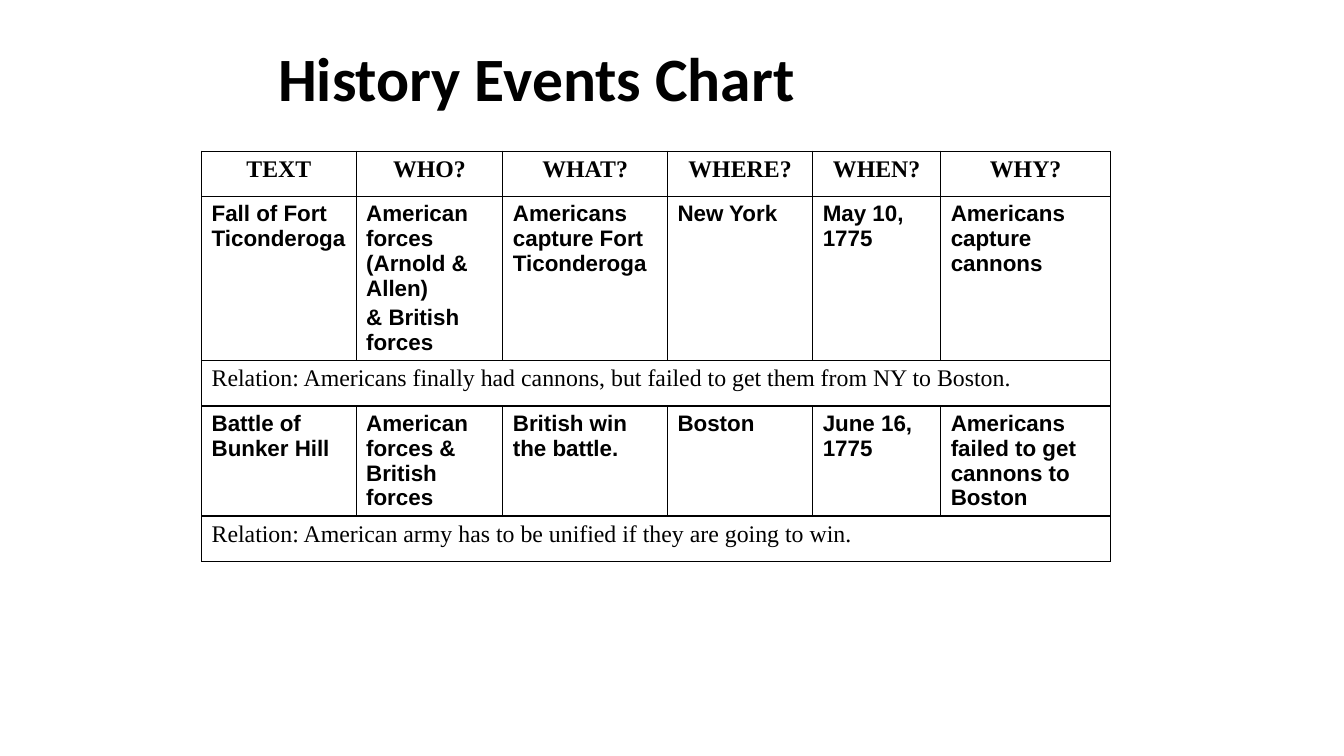
import pptx
import pptx.dml.color
import pptx.enum.text
import pptx.oxml
import pptx.oxml.ns
import pptx.util

Pt = pptx.util.Pt
ALIGN = pptx.enum.text.PP_ALIGN
BLACK = pptx.dml.color.RGBColor(0x00, 0x00, 0x00)

COLUMN_WIDTHS = [110.4, 104.8, 117.6, 103.8, 91.4, 121.4]
ROW_HEIGHTS = [32.5, 117, 32.5, 78.5, 32.5]
HANGING_INDENT = 27

HEADINGS = ["TEXT", "WHO?", "WHAT?", "WHERE?", "WHEN?", "WHY?"]
# Each event: its six cells (one list of paragraphs per cell) and its relation
EVENTS = [
    ([["Fall of Fort Ticonderoga"],
      ["American forces (Arnold & Allen)", "& British forces"],
      ["Americans capture Fort Ticonderoga"],
      ["New York"],
      ["May 10, 1775"],
      ["Americans capture cannons"]],
     "Relation: Americans finally had cannons, but failed to get them from NY to Boston."),
    ([["Battle of Bunker Hill"],
      ["American forces & British forces"],
      ["British win the battle."],
      ["Boston"],
      ["June 16, 1775"],
      ["Americans failed to get cannons to Boston"]],
     "Relation: American army has to be unified if they are going to win."),
]


def add_run(paragraph, text, font_name, size, bold):
    run = paragraph.add_run()
    run.text = text
    run.font.name = font_name
    run.font.size = Pt(size)
    run.font.bold = bold
    run.font.color.rgb = BLACK


def outline_cell(cell):
    cell_properties = cell._tc.get_or_add_tcPr()
    for position, side in enumerate(("lnL", "lnR", "lnT", "lnB")):
        border = pptx.oxml.parse_xml(
            f'<a:{side} {pptx.oxml.ns.nsdecls("a")} w="{Pt(1)}"><a:solidFill>'
            f'<a:srgbClr val="{BLACK}"/></a:solidFill></a:{side}>')
        cell_properties.insert(position, border)


def hang_indent(paragraph):
    paragraph_properties = paragraph._p.get_or_add_pPr()
    paragraph_properties.set("marL", str(Pt(HANGING_INDENT)))
    paragraph_properties.set("indent", str(-Pt(HANGING_INDENT)))


def fill_serif_cell(cell, text, bold, alignment):
    """Headings and relations share a font and a hanging indent."""
    paragraph = cell.text_frame.paragraphs[0]
    paragraph.alignment = alignment
    hang_indent(paragraph)
    add_run(paragraph, text, "Times New Roman", 17, bold)


def fill_event_cell(cell, lines):
    for number, line in enumerate(lines):
        if number == 0:
            paragraph = cell.text_frame.paragraphs[0]
        else:
            paragraph = cell.text_frame.add_paragraph()
            paragraph.space_before = Pt(3.2)
        add_run(paragraph, line, "Arial", 16, True)


def set_title(slide, text):
    title = slide.shapes.title
    title.left, title.top = Pt(191.5), Pt(21.6)
    title.width, title.height = Pt(612), Pt(72.7)
    title.text_frame.word_wrap = True
    title.text_frame.vertical_anchor = pptx.enum.text.MSO_ANCHOR.MIDDLE
    paragraph = title.text_frame.paragraphs[0]
    paragraph.alignment = ALIGN.LEFT
    paragraph.line_spacing = 0.9
    add_run(paragraph, text, "Calibri", 44, True)


def add_events_table(slide):
    table = slide.shapes.add_table(
        len(ROW_HEIGHTS), len(COLUMN_WIDTHS), Pt(144), Pt(108),
        Pt(sum(COLUMN_WIDTHS)), Pt(sum(ROW_HEIGHTS))).table
    table.first_row = False
    table.horz_banding = False
    for column, width in zip(table.columns, COLUMN_WIDTHS):
        column.width = Pt(width)
    for row, height in zip(table.rows, ROW_HEIGHTS):
        row.height = Pt(height)
    for cell in table.iter_cells():
        cell.fill.background()
        outline_cell(cell)

    # Heading row
    for column, heading in enumerate(HEADINGS):
        fill_serif_cell(table.cell(0, column), heading, True, ALIGN.CENTER)

    # Each event row is followed by its relation across the full width
    for number, (event_cells, relation) in enumerate(EVENTS):
        event_row = 1 + 2 * number
        for column, lines in enumerate(event_cells):
            fill_event_cell(table.cell(event_row, column), lines)
        relation_cell = table.cell(event_row + 1, 0)
        relation_cell.merge(table.cell(event_row + 1, len(HEADINGS) - 1))
        fill_serif_cell(relation_cell, relation, False, ALIGN.LEFT)


def main():
    presentation = pptx.Presentation()
    presentation.slide_width, presentation.slide_height = Pt(960), Pt(540)
    slide = presentation.slides.add_slide(presentation.slide_layouts[5])
    set_title(slide, "History Events Chart")
    add_events_table(slide)
    presentation.save("out.pptx")


if __name__ == "__main__":
    main()
